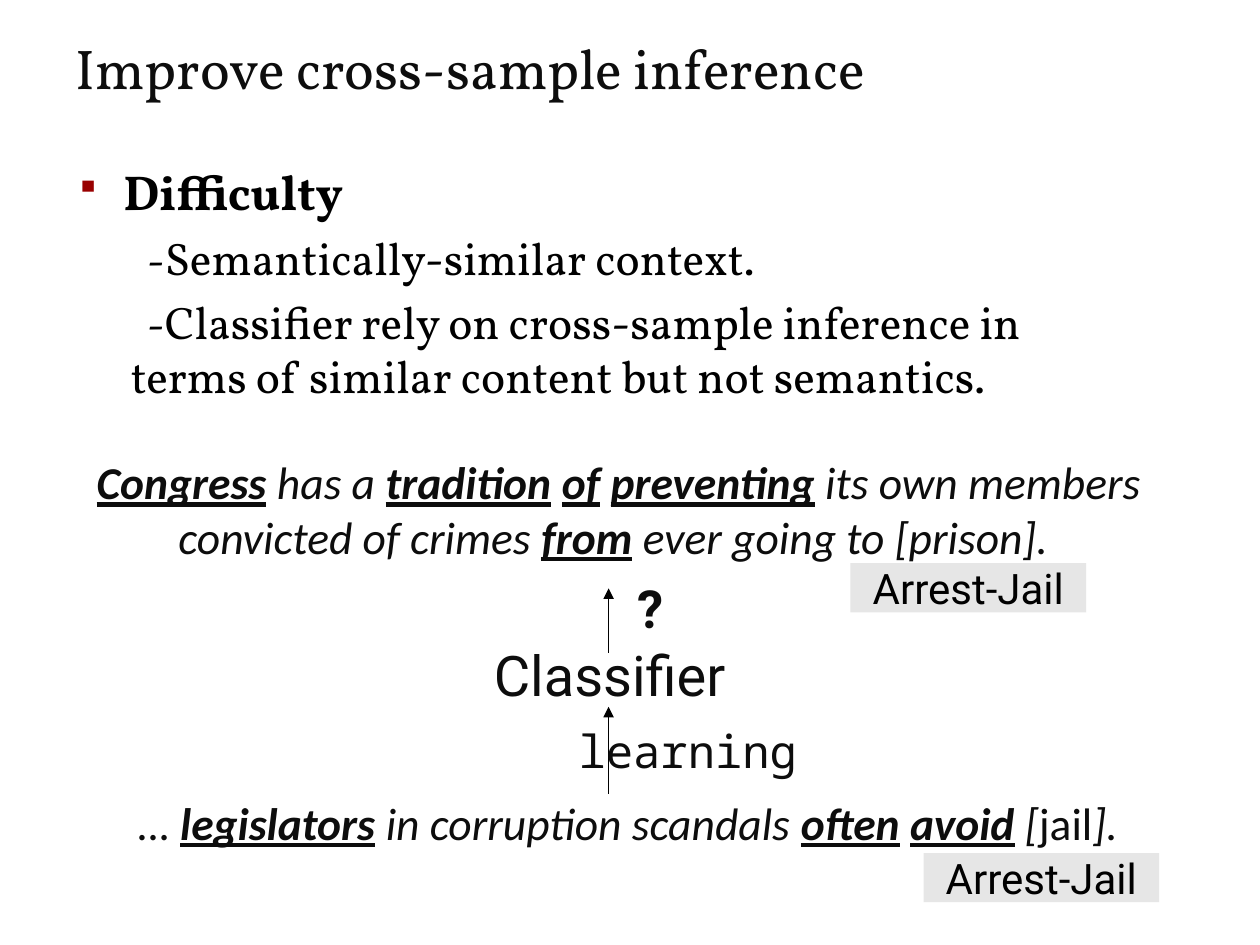
from lxml import etree
from pptx import Presentation
from pptx import util as u
from pptx.dml.color import RGBColor
from pptx.enum import shapes, text
from pptx.oxml.ns import qn

INK = "0D0D0D"
KEY = {"bold": True, "underline": True}


def color(code):
    """Turn a hex string into a colour."""
    return RGBColor.from_string(code)


def add(parent, tag, **attrs):
    """Append a drawing element with its attributes."""
    node = etree.SubElement(parent, qn(tag))
    for name, value in attrs.items():
        node.set(name, value)
    return node


def write(para, runs, font="Calibri", size=26, ink=INK, align="LEFT", **look):
    """Fill a paragraph with a string or with (text, look) runs."""
    para.alignment = getattr(text.PP_ALIGN, align)
    for words, extra in [(runs, {})] if isinstance(runs, str) else runs:
        run = para.add_run()
        run.text = words
        run.font.name = font
        run.font.size = u.Pt(size)
        run.font.color.rgb = color(ink)
        for name, value in {**look, **extra}.items():
            setattr(run.font, name, value)


def frame(shape, anchor="MIDDLE"):
    """Set wrapping and anchor, and return the text frame."""
    body = shape.text_frame
    body.word_wrap = True
    body.vertical_anchor = getattr(text.MSO_ANCHOR, anchor)
    return body


def label(slide, box, runs, **look):
    """Add a one-paragraph text box."""
    shape = slide.shapes.add_textbox(*map(u.Inches, box))
    write(frame(shape).paragraphs[0], runs, **look)


def tag(slide, left, top):
    """Add a grey relation tag."""
    box = map(u.Inches, (left, top, 1.87, 0.39))
    shape = slide.shapes.add_shape(shapes.MSO_SHAPE.RECTANGLE, *box)
    shape.shadow.inherit = False
    shape.fill.solid()
    shape.fill.fore_color.rgb = color("E6E6E6")
    shape.line.fill.background()
    write(frame(shape).paragraphs[0], "Arrest-Jail", font="Roboto", size=24,
          ink="000000", align="CENTER")


def arrow(slide, left, start, end):
    """Add a vertical arrow."""
    line = slide.shapes.add_connector(
        shapes.MSO_CONNECTOR.STRAIGHT,
        *map(u.Inches, (left, start, left, end)))
    line.line.color.rgb = color("000000")
    line.line.width = u.Pt(0.75)
    add(line.line._get_or_add_ln(), "a:tailEnd", type="triangle")
    add(line._element.spPr, "a:effectLst")


def indent(para, left, first):
    """Set the left margin and first-line indent."""
    props = para._p.get_or_add_pPr()
    props.set("marL", str(u.Inches(left)))
    props.set("indent", str(u.Inches(first)))
    return props


def points(slide, box, head, items):
    """Add a bulleted heading with dashed items below."""
    shape = slide.shapes.add_textbox(*map(u.Inches, box))
    body = frame(shape, "TOP")
    para = body.paragraphs[0]
    para.space_before = u.Pt(5.5)
    props = indent(para, 0.38, -0.38)
    add(add(props, "a:buClr"), "a:srgbClr", val="990000")
    add(props, "a:buSzPct", val="70000")
    add(props, "a:buChar", char="▪")
    write(para, head, font="Vollkorn", size=28, ink="000000", bold=True)
    for item in items:
        para = body.add_paragraph()
        para.level = 1
        para.space_before = u.Pt(5.5)
        indent(para, 0.44, 0.13)
        write(para, [("-", {"size": u.Pt(24)}), (item, {})],
              font="Vollkorn", ink="000000")


def main():
    """Build the slide."""
    deck = Presentation()
    deck.slide_width, deck.slide_height = u.Inches(10), u.Inches(7.5)
    slide = deck.slides.add_slide(deck.slide_layouts[6])
    label(slide, (0.5, 0, 9.22, 1.07), "Improve cross-sample inference",
          font="Vollkorn", size=32)
    points(slide, (0.5, 1.23, 8.58, 2.88), "Difficulty", [
        "Semantically-similar context.",
        "Classifier rely on cross-sample inference in terms of similar "
        "content but not semantics."])
    label(slide, (1, 6.01, 8.45, 1.03), [
        ("… ", {}), ("legislators", KEY), (" in corruption scandals ", {}),
        ("often", KEY), (" ", {}), ("avoid", KEY), (" [", {}),
        ("jail", {"italic": False}), ("].", {})], italic=True)
    label(slide, (0.25, 3.12, 9.32, 1.84), [
        ("Congress", KEY), (" has a ", {}), ("tradition", KEY), (" ", {}),
        ("of", KEY), (" ", {}), ("preventing", KEY),
        (" its own members convicted of crimes ", {}), ("from", KEY),
        (" ever going to [prison]. ", {})], italic=True, align="CENTER")
    label(slide, (3.47, 5.03, 2.74, 0.64), "Classifier",
          font="Roboto", size=32, align="CENTER")
    arrow(slide, 4.83, 6.3, 5.61)
    arrow(slide, 4.83, 5.18, 4.67)
    label(slide, (4.35, 5.77, 2.22, 0.37), "learning",
          font="Noto Sans Mono", align="CENTER")
    label(slide, (4.05, 4.43, 2.22, 0.78), "?",
          font="Roboto", size=30, align="CENTER", bold=True)
    tag(slide, 6.75, 4.47)
    tag(slide, 7.33, 6.77)
    deck.save("out.pptx")


if __name__ == "__main__":
    main()
